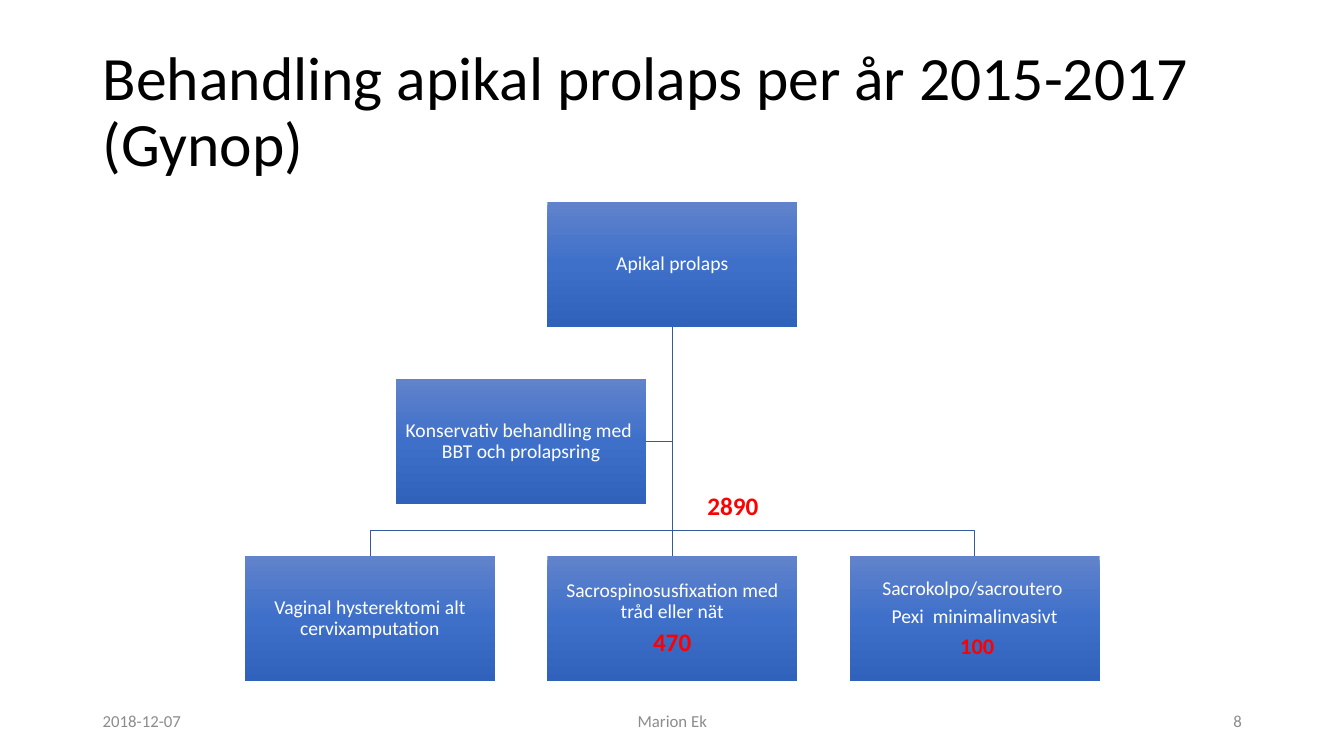
from copy import deepcopy

from pptx import Presentation
from pptx import util as u
from pptx.dml.color import RGBColor
from pptx.enum import shapes, text
from pptx.oxml.ns import qn
from pptx.oxml import parse_xml

COLORS = {"title": "000000", "label": "FFFFFF", "count": "FF0000", "footer": "8C8C8C",
          "line": "365B9D", "top": "6183CB", "middle": "3E70CA", "bottom": "3062BB"}
BOX_W, BOX_H = 2.48, 1.24
CENTER, STEP = 6.67, 3
ROOT_Y, SIDE_Y, CHILD_Y = 2, 3.76, 5.52
BAR_Y = 5.26
ALIGN = text.PP_ALIGN


def rgb(name):
    return RGBColor.from_string(COLORS[name])


def write(frame, lines, size=14, color="label", bold=False, align=ALIGN.LEFT,
          spacing=None, after=0, inset=None, wrap=True, anchor=text.MSO_ANCHOR.MIDDLE):
    frame.word_wrap = wrap
    frame.auto_size = text.MSO_AUTO_SIZE.NONE
    frame.vertical_anchor = anchor
    if inset is not None:
        frame.margin_left = frame.margin_right = u.Inches(inset)
        frame.margin_top = frame.margin_bottom = u.Inches(inset)
    for index, line in enumerate(lines):
        words, own = line if isinstance(line, tuple) else (line, {})
        paragraph = frame.paragraphs[0] if index == 0 else frame.add_paragraph()
        paragraph.alignment = align
        paragraph.line_spacing = spacing
        paragraph.space_before = u.Pt(0)
        paragraph.space_after = u.Pt(after)
        run = paragraph.add_run()
        run.text = words
        run.font.name = "Calibri"
        run.font.size = u.Pt(own.get("size", size))
        run.font.bold = own.get("bold", bold)
        run.font.color.rgb = rgb(own.get("color", color))


class TreatmentSlide:
    """Builds the treatment chart slide in one style."""

    def __init__(self, deck):
        self.slide = deck.slides.add_slide(deck.slide_layouts[5])
        self.shapes = self.slide.shapes

    def title(self, words, left, top, width, height):
        heading = self.shapes.title
        heading.left, heading.top = u.Inches(left), u.Inches(top)
        heading.width, heading.height = u.Inches(width), u.Inches(height)
        write(heading.text_frame, [words], size=44, color="title", spacing=0.9)

    def box(self, center, top, lines):
        treatment = self.shapes.add_shape(
            shapes.MSO_SHAPE.RECTANGLE, u.Inches(center - BOX_W / 2), u.Inches(top),
            u.Inches(BOX_W), u.Inches(BOX_H))
        treatment.shadow.inherit = False
        treatment.line.fill.background()
        treatment.fill.gradient()
        treatment.fill.gradient_angle = 270
        stops = treatment._element.spPr.find(qn("a:gradFill")).find(qn("a:gsLst"))
        stops.append(deepcopy(stops[0]))
        shades = zip(treatment.fill.gradient_stops, (0, 0.5, 1), ("top", "middle", "bottom"))
        for stop, position, shade in shades:
            stop.position = position
            stop.color.rgb = rgb(shade)
        write(treatment.text_frame, lines, align=ALIGN.CENTER, spacing=0.9, after=5, inset=0.01)
        return treatment

    def stroke(self, line):
        line.color.rgb = rgb("line")
        line.width = u.Pt(0.5)

    def trunk(self, upper, lower):
        stem = self.shapes.add_connector(shapes.MSO_CONNECTOR.STRAIGHT, 0, 0, 0, 0)
        stem.begin_connect(upper, 2)
        stem.end_connect(lower, 0)
        self.stroke(stem.line)
        stem._element.spPr.append(parse_xml(
            '<a:effectLst xmlns:a="http://schemas.openxmlformats.org/drawingml/2006/main"/>'))

    def branch(self, *points):
        start, *bends = [(u.Inches(x), u.Inches(y)) for x, y in points]
        builder = self.shapes.build_freeform(*start)
        builder.add_line_segments(bends, close=False)
        route = builder.convert_to_shape()
        route.shadow.inherit = False
        route.fill.background()
        self.stroke(route.line)

    def label(self, words, left, top, width, height, **style):
        caption = self.shapes.add_textbox(
            u.Inches(left), u.Inches(top), u.Inches(width), u.Inches(height))
        write(caption.text_frame, [words], **style)


def main():
    deck = Presentation()
    deck.slide_width, deck.slide_height = u.Inches(40 / 3), u.Inches(7.5)
    page = TreatmentSlide(deck)
    page.title("Behandling apikal prolaps per år 2015-2017 (Gynop)", 0.92, 0.4, 11.5, 1.45)

    root_bottom = (CENTER, ROOT_Y + BOX_H)
    side_middle = SIDE_Y + BOX_H / 2
    left, middle, right = [CENTER + STEP * offset for offset in (-1, 0, 1)]
    page.branch(root_bottom, (CENTER, side_middle),
                (CENTER - STEP / 2 + BOX_W / 2, side_middle))
    for center in (right, left):
        page.branch(root_bottom, (CENTER, BAR_Y), (center, BAR_Y), (center, CHILD_Y))

    prolapse = page.box(CENTER, ROOT_Y, ["Apikal prolaps"])
    page.box(left, CHILD_Y, ["Vaginal hysterektomi alt cervixamputation"])
    fixation = page.box(middle, CHILD_Y, [
        "Sacrospinosusfixation med tråd eller nät",
        ("470", {"size": 18, "bold": True, "color": "count"})])
    page.box(right, CHILD_Y, [
        "Sacrokolpo/sacroutero ", "Pexi  minimalinvasivt",
        (" 100", {"size": 16, "bold": True, "color": "count"})])
    page.box(CENTER - STEP / 2, SIDE_Y, ["Konservativ behandling med  BBT och prolapsring"])
    page.trunk(prolapse, fixation)

    page.label("2890", 6.92, 4.82, 0.71, 0.4, size=18, color="count", bold=True,
               wrap=False, anchor=text.MSO_ANCHOR.TOP)
    for words, start, width, align in (("2018-12-07", 0.92, 3, ALIGN.LEFT),
                                       ("Marion Ek", 4.42, 4.5, ALIGN.CENTER),
                                       ("8", 9.42, 3, ALIGN.RIGHT)):
        page.label(words, start, 6.95, width, 0.4, size=12, color="footer", align=align)
    deck.save("out.pptx")


if __name__ == "__main__":
    main()
